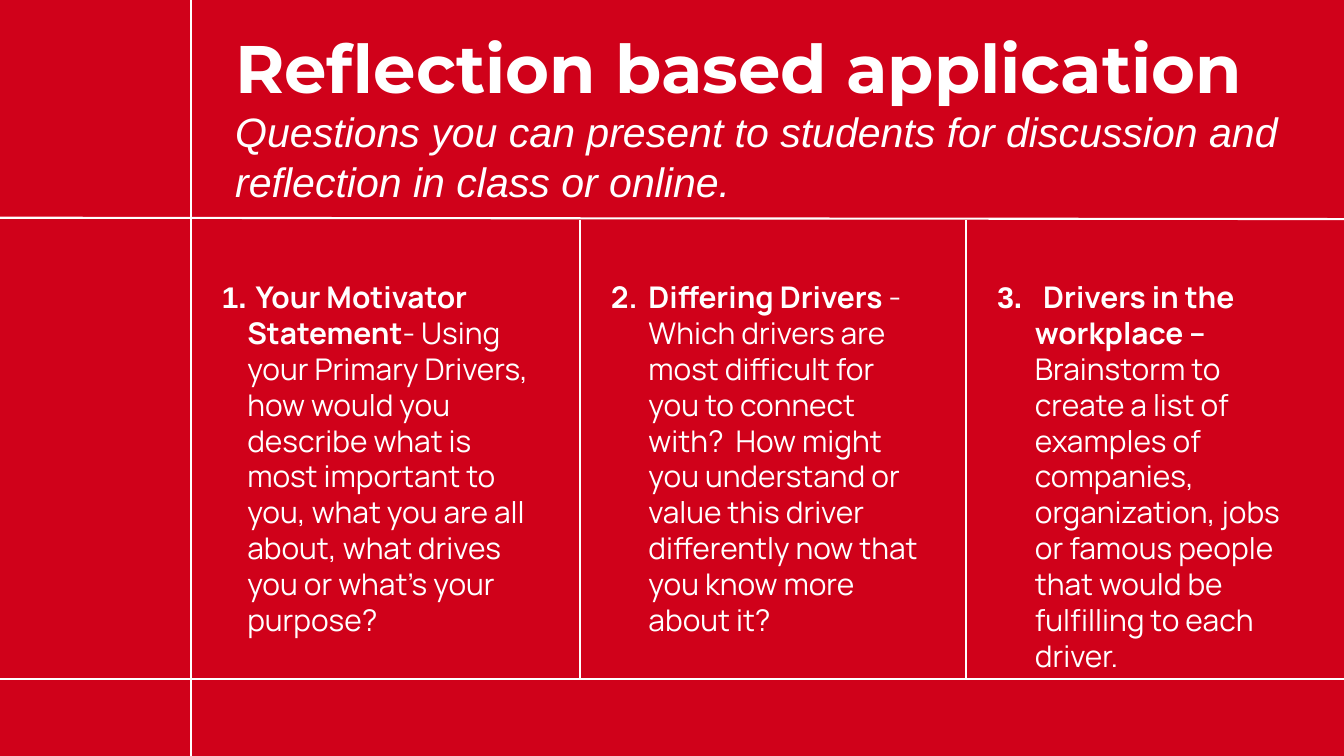
import pptx
import pptx.util
import pptx.dml.color
import pptx.enum.shapes
import pptx.oxml.ns
from lxml import etree

Inches = pptx.util.Inches
COLORS = {"red": "D0011A", "white": "FFFFFF"}
TITLE = "Reflection based application"
SUBTITLE = "Questions you can present to students for discussion and reflection in class or online."
DIVIDERS = [2.84, 8.63, 14.38]
QUESTIONS = [
    (" ", "Your Motivator Statement",
     "- Using your Primary Drivers, how would you describe what is most important to you, "
     "what you are all about, what drives you or what’s your purpose?", 0.38),
    ("", "Differing Drivers\u00a0",
     "- Which drivers are most difficult for you to connect with?  How might you understand "
     "or value this driver differently now that you know more about it?", 0.56),
    (" ", "Drivers in the workplace – ",
     "Brainstorm to create a list of examples of companies, organization, jobs or famous "
     "people that would be fulfilling to each driver.", 0.56),
]


def color(name):
    """Return the named colour as an RGB value."""
    return pptx.dml.color.RGBColor.from_string(COLORS[name])


def add_rule(page, start, end):
    """Draw a white rule between two points."""
    rule = page.shapes.add_connector(
        pptx.enum.shapes.MSO_CONNECTOR.STRAIGHT, *[Inches(value) for value in start + end])
    rule.line.color.rgb = color("white")
    rule.line.width = pptx.util.Pt(2.25)
    etree.SubElement(rule._element.spPr, pptx.oxml.ns.qn("a:effectLst"))


def add_frame(page, left, top, width, height):
    """Add a wrapping text box without margins and return its text frame."""
    box = page.shapes.add_textbox(Inches(left), Inches(top), Inches(width), Inches(height))
    frame = box.text_frame
    frame.word_wrap = True
    frame.margin_left = frame.margin_right = frame.margin_top = frame.margin_bottom = 0
    return frame


def add_span(para, text, size=32, font="Manrope", bold=False, italic=False):
    """Append a white span and set the line pitch to suit its size."""
    span = para.add_run()
    span.text = text
    span.font.name = font
    span.font.size = pptx.util.Pt(size)
    span.font.bold = bold
    span.font.italic = italic
    span.font.color.rgb = color("white")
    para.line_spacing = pptx.util.Pt(size * 1.2)


def number_paragraph(para, number, indent):
    """Give a paragraph a hanging automatic number."""
    props = para._p.get_or_add_pPr()
    props.set("marL", str(Inches(indent)))
    props.set("indent", str(-Inches(indent)))
    bullet = etree.SubElement(props, pptx.oxml.ns.qn("a:buAutoNum"))
    bullet.set("type", "arabicPeriod")
    bullet.set("startAt", str(number))


def add_grid(page):
    """Draw the rules that divide the page."""
    first, *others = DIVIDERS
    add_rule(page, (first, 11.25), (first, 0))
    add_rule(page, (0, 3.24), (20, 3.26))
    add_rule(page, (0, 10.1), (20, 10.1))
    for left in others:
        add_rule(page, (left, 10.09), (left, 3.27))


def add_heading(page, left, top, width, height):
    """Place the title and the subtitle."""
    frame = add_frame(page, left, top, width, height)
    add_span(frame.paragraphs[0], TITLE, size=72, font="Montserrat", bold=True)
    add_span(frame.add_paragraph(), SUBTITLE, size=44, font="Arial", italic=True)


def add_question(page, left, top, width, height, number, question):
    """Place one numbered question."""
    lead, topic, prompt, indent = question
    para = add_frame(page, left, top, width, height).paragraphs[0]
    number_paragraph(para, number, indent)
    if lead:
        add_span(para, lead, font="Arial", bold=True)
    add_span(para, topic, bold=True)
    add_span(para, prompt)


def main():
    """Build and save the deck."""
    deck = pptx.Presentation()
    deck.slide_width, deck.slide_height = Inches(20), Inches(11.25)
    page = deck.slides.add_slide(deck.slide_layouts[6])
    page.background.fill.solid()
    page.background.fill.fore_color.rgb = color("red")
    add_grid(page)
    add_heading(page, 3.5, 0.39, 15.92, 3.9)
    for number, (divider, question) in enumerate(zip(DIVIDERS, QUESTIONS), 1):
        add_question(page, divider + 0.46, 4.15, 4.71, 5.39, number, question)
    deck.save("out.pptx")


if __name__ == "__main__":
    main()
